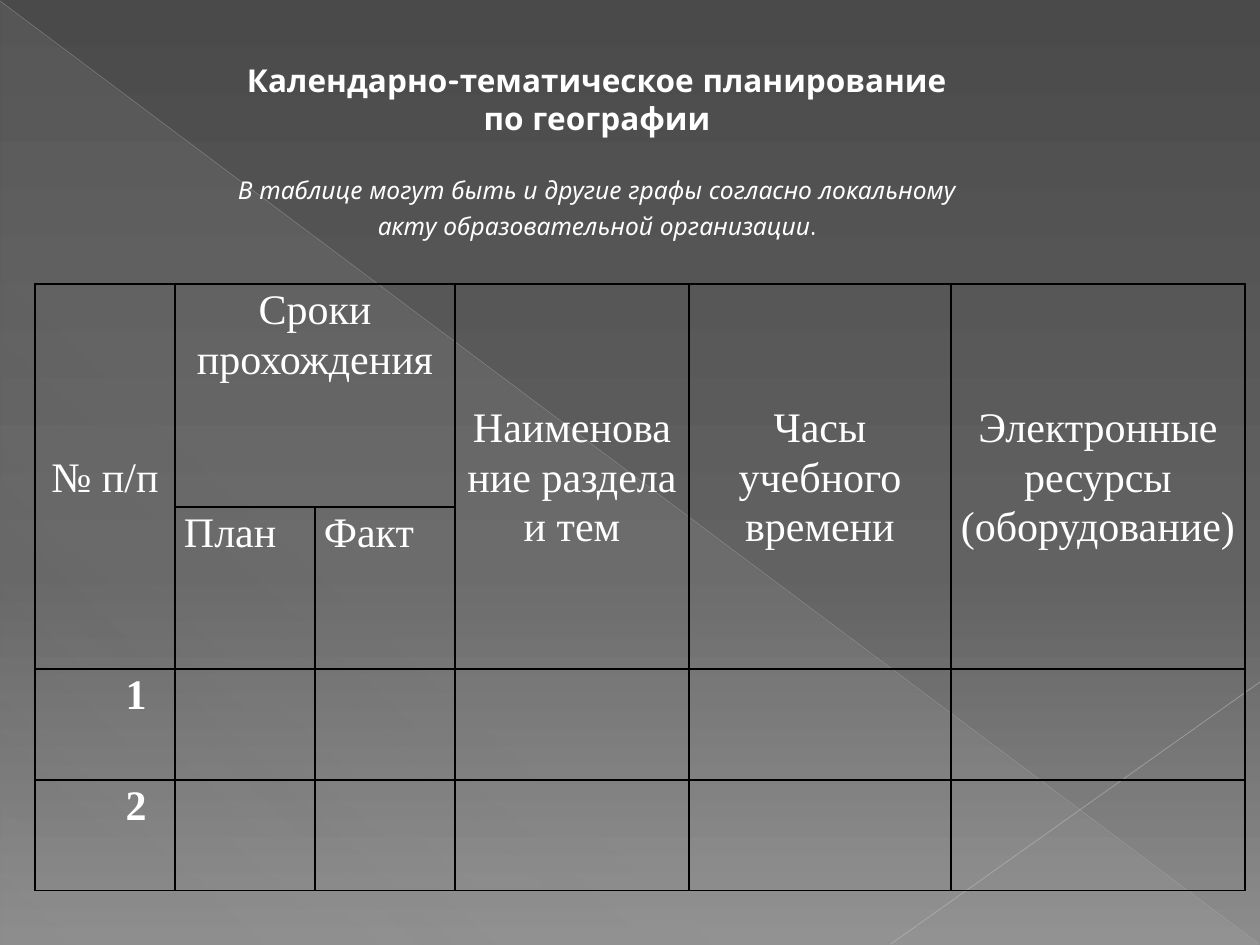
"""Build a slide with a calendar planning table for geography lessons."""
from typing import NamedTuple, Optional

from lxml import etree
from pptx import Presentation
from pptx import util as u
from pptx.dml.color import RGBColor
from pptx.enum import shapes, text
from pptx.oxml import parse_xml
from pptx.oxml.ns import nsdecls, qn

PX_PER_INCH = 126
WHITE = RGBColor(0xFF, 0xFF, 0xFF)
BLACK = RGBColor(0x00, 0x00, 0x00)
DARK = RGBColor(0x4A, 0x4A, 0x4A)
MIDDLE = RGBColor(0x62, 0x62, 0x62)
LIGHT = RGBColor(0x8C, 0x8C, 0x8C)
SHEEN = RGBColor(0xD2, 0xD2, 0xD2)
LONG_RAY = RGBColor(0xBF, 0xBF, 0xBF)
SHORT_RAY = RGBColor(0xC6, 0xC6, 0xC6)
COLUMN_WIDTHS = (140, 140, 140, 234, 262, 294)
ROW_HEIGHTS = (223, 161, 111, 111)


class Stop(NamedTuple):
    position: int
    color: RGBColor
    opacity: int = 100


class Ray(NamedTuple):
    start: tuple[int, int]
    end: tuple[int, int]
    color: RGBColor
    width: float
    opacity: int


class Run(NamedTuple):
    words: str
    size: int
    font: str = "Quicksand"
    bold: bool = False
    italic: bool = False


class Entry(NamedTuple):
    row: int
    column: int
    words: str
    row_span: int = 1
    column_span: int = 1
    middle: bool = False
    centered: bool = True
    bold: bool = False
    indent: int = 0


BACKGROUND = (Stop(0, DARK), Stop(60, MIDDLE), Stop(100, LIGHT))
TRIANGLE = (Stop(0, SHEEN, 10), Stop(70, SHEEN, 8), Stop(100, SHEEN, 1))
RAYS = (
    Ray((0, 1), (1259, 944), LONG_RAY, 0.39, 35),
    Ray((1260, 682), (891, 944), SHORT_RAY, 0.47, 45),
)
TITLE = (Run("Календарно-тематическое планирование по географии", 18, bold=True),)
REMARK = (
    Run("В таблице могут быть и другие графы согласно локальному акту "
        "образовательной организации", 14, italic=True),
    Run(".", 18),
)
ENTRIES = (
    Entry(0, 0, "№ п/п", row_span=2, middle=True),
    Entry(0, 1, "Сроки прохождения", column_span=2),
    Entry(0, 3, "Наименование раздела и тем", row_span=2, middle=True),
    Entry(0, 4, "Часы учебного времени", row_span=2, middle=True),
    Entry(0, 5, "Электронные ресурсы (оборудование)", row_span=2, middle=True),
    Entry(1, 1, "План", centered=False),
    Entry(1, 2, "Факт", centered=False),
    Entry(2, 0, "1", bold=True, indent=62),
    Entry(3, 0, "2", bold=True, indent=62),
)


def px(length: int) -> u.Emu:
    """Turn pixels into EMU."""
    return u.Emu(round(length * 914400 / PX_PER_INCH))


def set_gradient(properties, stops: tuple[Stop, ...], angle: int) -> None:
    """Swap the solid fill of the properties for a linear gradient."""
    marks = "".join(
        f'<a:gs pos="{stop.position * 1000}"><a:srgbClr val="{stop.color}">'
        f'<a:alpha val="{stop.opacity * 1000}"/></a:srgbClr></a:gs>'
        for stop in stops
    )
    gradient = parse_xml(
        f'<a:gradFill {nsdecls("a")} rotWithShape="1"><a:gsLst>{marks}</a:gsLst>'
        f'<a:lin ang="{angle * 60000}" scaled="0"/></a:gradFill>'
    )
    properties.replace(properties.find(qn("a:solidFill")), gradient)


def add_ray(slide, ray: Ray) -> None:
    """Draw one translucent line."""
    connector = slide.shapes.add_connector(
        shapes.MSO_CONNECTOR.STRAIGHT, *map(px, ray.start + ray.end))
    connector.line.color.rgb = ray.color
    connector.line.width = u.Pt(ray.width)
    properties = connector.element.spPr
    color = next(properties.iter(qn("a:srgbClr")))
    etree.SubElement(color, qn("a:alpha"), val=str(ray.opacity * 1000))
    etree.SubElement(properties, qn("a:effectLst"))


def add_run(paragraph, item: Run) -> None:
    """Append one formatted run to the paragraph."""
    run = paragraph.add_run()
    run.text = item.words
    run.font.name = item.font
    run.font.size = u.Pt(item.size)
    run.font.bold = item.bold
    run.font.italic = item.italic
    run.font.color.rgb = WHITE


def add_heading(slide) -> None:
    """Add the title with the remark below it."""
    box = slide.shapes.add_textbox(px(223), px(55), px(748), px(233))
    frame = box.text_frame
    frame.word_wrap = True
    title, remark = frame.paragraphs[0], frame.add_paragraph()
    remark.space_before = u.Pt(21.6)
    for paragraph, runs in ((title, TITLE), (remark, REMARK)):
        paragraph.alignment = text.PP_ALIGN.CENTER
        for item in runs:
            add_run(paragraph, item)


def style_cell(cell) -> None:
    """Clear the fill of the cell and give it thin black borders."""
    cell.fill.background()
    cell.margin_left = cell.margin_right = px(9)
    cell.margin_top = cell.margin_bottom = 0
    properties = cell._tc.get_or_add_tcPr()
    for index, side in enumerate(("lnL", "lnR", "lnT", "lnB")):
        properties.insert(index, parse_xml(
            f'<a:{side} {nsdecls("a")} w="12700"><a:solidFill>'
            f'<a:srgbClr val="{BLACK}"/></a:solidFill></a:{side}>'))


def fill_cell(table, entry: Entry) -> None:
    """Merge the cells of the entry and write its words."""
    cell = table.cell(entry.row, entry.column)
    if entry.row_span * entry.column_span > 1:
        cell.merge(table.cell(entry.row + entry.row_span - 1,
                              entry.column + entry.column_span - 1))
    anchors = text.MSO_ANCHOR
    cell.vertical_anchor = anchors.MIDDLE if entry.middle else anchors.TOP
    paragraph = cell.text_frame.paragraphs[0]
    alignment: Optional[text.PP_ALIGN] = text.PP_ALIGN.CENTER if entry.centered else None
    paragraph.alignment = alignment
    paragraph.line_spacing = 1.07
    if entry.indent:
        paragraph._p.get_or_add_pPr().set("indent", str(px(entry.indent)))
    add_run(paragraph, Run(entry.words, 24, "Times New Roman", entry.bold))


def add_plan(slide) -> None:
    """Add the planning table."""
    table = slide.shapes.add_table(
        len(ROW_HEIGHTS), len(COLUMN_WIDTHS), px(35), px(284),
        px(sum(COLUMN_WIDTHS)), px(sum(ROW_HEIGHTS))).table
    table.first_row = table.horz_banding = False
    for column, width in zip(table.columns, COLUMN_WIDTHS):
        column.width = px(width)
    for row, height in zip(table.rows, ROW_HEIGHTS):
        row.height = px(height)
    for cell in table.iter_cells():
        style_cell(cell)
    for entry in ENTRIES:
        fill_cell(table, entry)


def main() -> None:
    """Build and save the presentation."""
    presentation = Presentation()
    presentation.slide_width, presentation.slide_height = px(1260), px(945)
    slide = presentation.slides.add_slide(presentation.slide_layouts[6])
    slide.background.fill.solid()
    set_gradient(next(slide.element.iter(qn("p:bgPr"))), BACKGROUND, 90)
    triangle = slide.shapes.add_shape(
        shapes.MSO_SHAPE.RIGHT_TRIANGLE, px(1), px(2), px(1258), px(943))
    triangle.shadow.inherit = False
    triangle.line.fill.background()
    triangle.fill.solid()
    set_gradient(triangle.element.spPr, TRIANGLE, 133)
    for ray in RAYS:
        add_ray(slide, ray)
    add_heading(slide)
    add_plan(slide)
    presentation.save("out.pptx")


if __name__ == "__main__":
    main()
